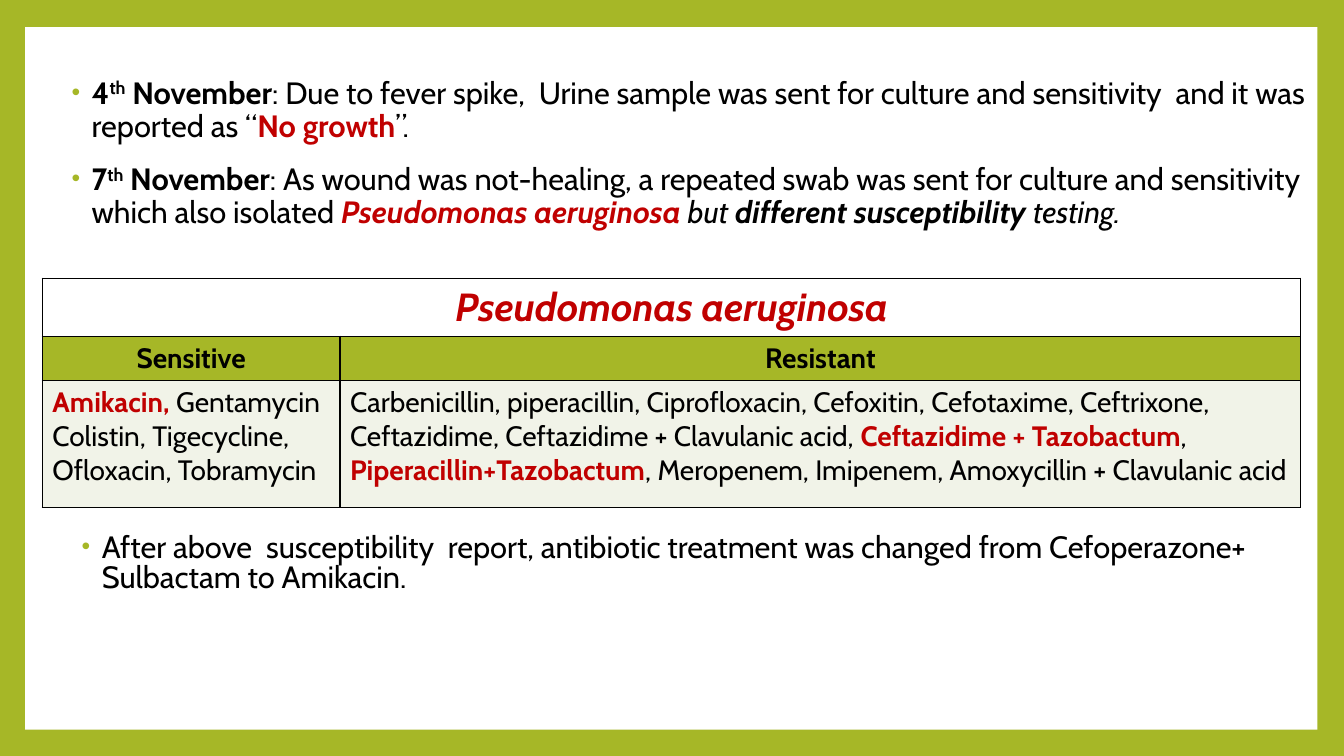
import pptx
import pptx.dml.color
import pptx.enum.shapes
import pptx.enum.text
import pptx.oxml
import pptx.oxml.ns
import pptx.util

Pt = pptx.util.Pt
RGB = pptx.dml.color.RGBColor
ALIGN = pptx.enum.text.PP_ALIGN
LIME = RGB(0xA6, 0xB7, 0x27)
PALE = RGB(0xF1, 0xF3, 0xE8)
WHITE = RGB(0xFF, 0xFF, 0xFF)
BLACK = RGB(0, 0, 0)
RED = RGB(0xC0, 0, 0)
FONT = "Cabin"


def node(xml):
    return pptx.oxml.parse_xml(xml.replace(">", f" {pptx.oxml.ns.nsdecls('a')}>", 1))


def write(para, text, size=22, color=BLACK, bold=False, slant=False, raised=False):
    run = para.add_run()
    run.text = text
    font = run.font
    font.name, font.size = FONT, Pt(size)
    font.bold, font.italic = bold, slant
    font.color.rgb = color
    if raised:
        run.font._element.set("baseline", "30000")


def fill(frame, paras, **base):
    for index, parts in enumerate(paras):
        para = frame.add_paragraph() if index else frame.paragraphs[0]
        for text, style in parts:
            write(para, text, **{**base, **style})
    return frame.paragraphs


class Page:
    def __init__(self, deck, back):
        self.slide = deck.slides.add_slide(deck.slide_layouts[3])
        self.slide.background.fill.solid()
        self.slide.background.fill.fore_color.rgb = back
        title = self.slide.shapes.title.element
        title.getparent().remove(title)

    def panel(self, box, color):
        kind = pptx.enum.shapes.MSO_SHAPE.RECTANGLE
        shape = self.slide.shapes.add_shape(kind, *map(Pt, box))
        shape.shadow.inherit = False
        shape.fill.solid()
        shape.fill.fore_color.rgb = color
        shape.line.fill.background()
        shape.element.getparent().insert(2, shape.element)

    def bullets(self, slot, box, paras, pitch):
        body = self.slide.placeholders[slot]
        body.left, body.top, body.width, body.height = map(Pt, box)
        frame = body.text_frame
        frame.word_wrap = True
        frame.auto_size = pptx.enum.text.MSO_AUTO_SIZE.NONE
        frame.vertical_anchor = pptx.enum.text.MSO_ANCHOR.TOP
        for para in fill(frame, paras):
            para.line_spacing = pitch
            para.space_before = Pt(14)
            props = para._p.get_or_add_pPr()
            props.set("marL", str(Pt(18)))
            props.set("indent", str(-Pt(14.4)))
            for xml in (f'<a:buClr><a:srgbClr val="{LIME}"/></a:buClr>',
                        '<a:buSzPct val="80000"></a:buSzPct>',
                        '<a:buFont typeface="Arial"></a:buFont>',
                        '<a:buChar char="•"></a:buChar>'):
                props.append(node(xml))

    def table(self, box, cols, rows):
        grid = self.slide.shapes.add_table(len(rows), len(cols), *map(Pt, box)).table
        grid.first_row = grid.horz_banding = False
        for col, width in zip(grid.columns, cols):
            col.width = Pt(width)
        for line, (height, color, align, base, cells) in enumerate(rows):
            grid.rows[line].height = Pt(height)
            for index in range(len(cols)):
                cell = grid.cell(line, index)
                cell.fill.solid()
                cell.fill.fore_color.rgb = color
                self.edge(cell)
            if len(cells) < len(cols):
                grid.cell(line, 0).merge(grid.cell(line, len(cols) - 1))
            for index, paras in enumerate(cells):
                for para in fill(grid.cell(line, index).text_frame, paras, **base):
                    para.alignment = align

    def edge(self, cell):
        props = cell._tc.get_or_add_tcPr()
        for index, side in enumerate("LRTB"):
            props.insert(index, node(
                f'<a:ln{side} w="{Pt(1)}"><a:solidFill><a:srgbClr val="{BLACK}"/>'
                f'</a:solidFill></a:ln{side}>'))


def main():
    deck = pptx.Presentation()
    deck.slide_width, deck.slide_height = Pt(960), Pt(540)
    page = Page(deck, LIME)
    page.panel((18, 19.44, 923, 501.84), WHITE)

    bold, plain = {"bold": True}, {}
    high = {"bold": True, "raised": True}
    alert = {"bold": True, "color": RED}
    slant = {"slant": True}
    page.bullets(1, (40.32, 51.84, 900.72, 124.56), [
        [("4", bold), ("th", high), (" November", bold),
         (": Due to fever spike,  Urine sample was sent for culture and sensitivity"
          "  and it was reported as “", plain),
         ("No growth", alert), ("”.", plain)],
        [("7", bold), ("th", high), (" November", bold),
         (": As wound was not-healing, a repeated swab was sent for culture and "
          "sensitivity which also isolated ", plain),
         ("Pseudomonas aeruginosa ", {**alert, **slant}), ("but ", slant),
         ("different susceptibility ", {**bold, **slant}), ("testing.", slant)],
    ], 0.9)

    page.table((30.24, 198.72, 899, 163.5), (212.6, 686.4), [
        (41.5, WHITE, ALIGN.CENTER, {"size": 28},
         [[[("Pseudomonas aeruginosa", {**alert, **slant})]]]),
        (31.3, LIME, ALIGN.CENTER, {"size": 20},
         [[[("Sensitive", bold)]], [[("Resistant", bold)]]]),
        (90.7, PALE, ALIGN.LEFT, {"size": 20}, [
            [[("Amikacin,", alert), (" Gentamycin", plain)],
             [("Colistin, Tigecycline, Ofloxacin, Tobramycin", plain)]],
            [[("Carbenicillin, piperacillin, Ciprofloxacin, Cefoxitin, Cefotaxime, "
               "Ceftrixone, Ceftazidime, Ceftazidime + Clavulanic acid, ", plain),
              ("Ceftazidime + Tazobactum", alert), (", ", plain),
              ("Piperacillin+Tazobactum", alert),
              (", Meropenem, Imipenem, Amoxycillin + Clavulanic acid", plain)]],
        ]),
    ])

    page.bullets(2, (47.52, 378.72, 883.44, 54), [
        [("After above  susceptibility  report, antibiotic treatment was changed "
          "from Cefoperazone+ Sulbactam to Amikacin.", plain)],
    ], 0.8)
    deck.save("out.pptx")


if __name__ == "__main__":
    main()
